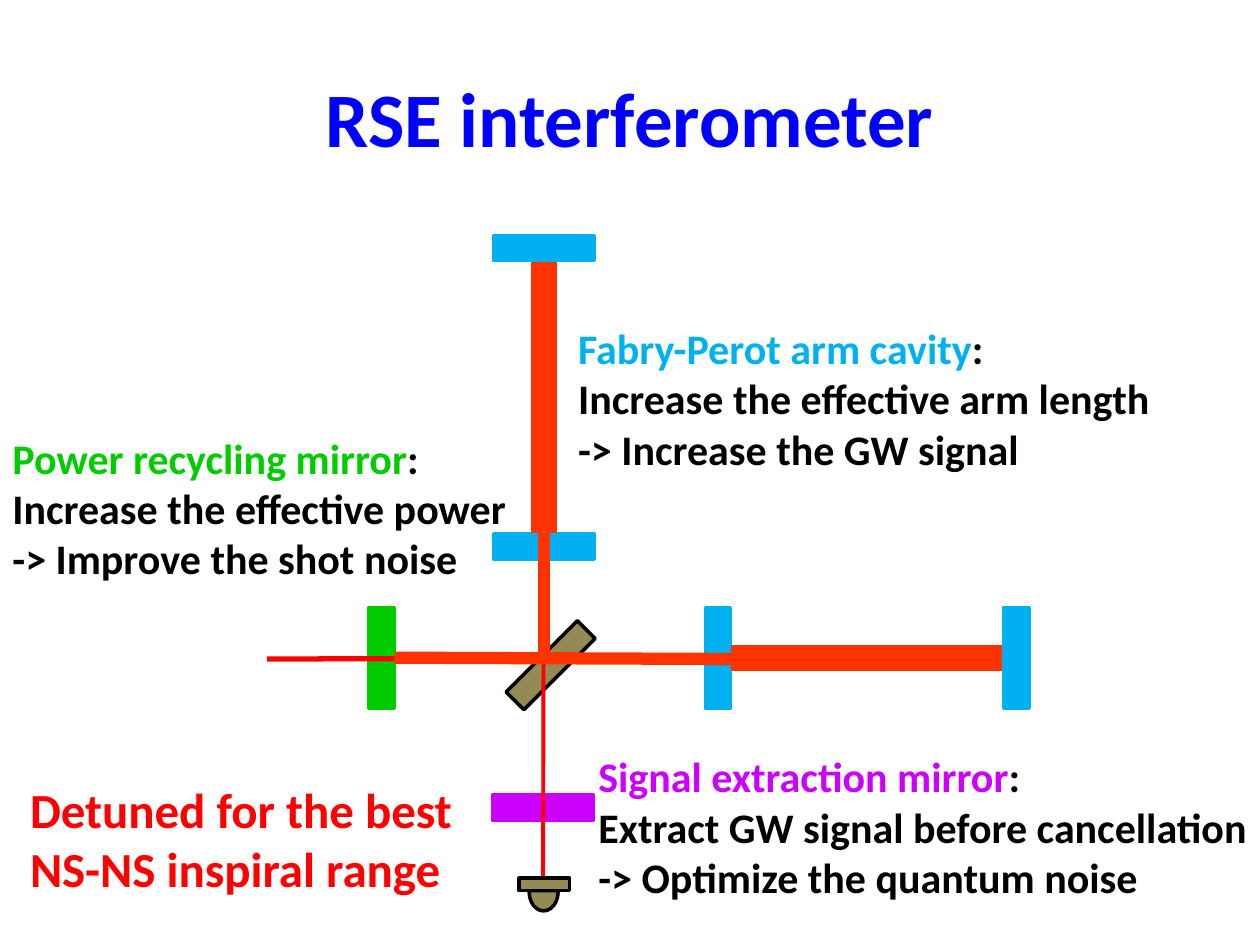
from lxml import etree
from pptx import Presentation
from pptx.dml.color import RGBColor
from pptx.enum.shapes import MSO_CONNECTOR, MSO_SHAPE
from pptx.enum.text import MSO_ANCHOR, MSO_AUTO_SIZE, PP_ALIGN
from pptx.oxml.ns import qn
from pptx.util import Inches, Pt

RECTANGLE, CHORD = MSO_SHAPE.RECTANGLE, MSO_SHAPE.CHORD
STRAIGHT = MSO_CONNECTOR.STRAIGHT
LEFT, CENTER = PP_ALIGN.LEFT, PP_ALIGN.CENTER
TOP, MIDDLE = MSO_ANCHOR.TOP, MSO_ANCHOR.MIDDLE
NO_RESIZE = MSO_AUTO_SIZE.NONE

BLACK, BLUE, RED, BEAM = "000000", "0000FF", "FF0000", "FF3300"
ARM, RECYCLING, EXTRACTION, OPTICS = "00B0F0", "00CC00", "CC00FF", "948A54"
MIRROR_LONG, MIRROR_THICK = 0.8, 0.2
AXIS_X, AXIS_Y = 4.32, 5.22


def color(hex_value):
    """Turn a hex string into a colour."""
    return RGBColor.from_string(hex_value)


def add_part(shapes, kind, box, fill, line):
    """Add a filled and outlined preset shape."""
    part = shapes.add_shape(kind, *map(Inches, box))
    part.shadow.inherit = False
    part.fill.solid()
    part.fill.fore_color.rgb = color(fill)
    part.line.color.rgb = color(line)
    part.line.width = Pt(2)
    return part


def add_mirror(page, center, fill, upright, line=None):
    """Add a mirror centred on a point, upright or lying flat."""
    width, height = MIRROR_LONG, MIRROR_THICK
    if upright:
        width, height = height, width
    x, y = center
    box = (x - width / 2, y - height / 2, width, height)
    return add_part(page.shapes, RECTANGLE, box, fill, line or fill)


def add_beam(page, start, end, hex_value, width):
    """Add a straight laser beam between two points."""
    beam = page.shapes.add_connector(STRAIGHT, *map(Inches, start + end))
    beam.line.color.rgb = color(hex_value)
    beam.line.width = Pt(width)
    etree.SubElement(beam._element.spPr, qn("a:effectLst"))


def add_detector(page):
    """Add the photodetector as a group of a half disc and a plate."""
    shapes = page.shapes.add_group_shape().shapes
    bowl = add_part(shapes, CHORD, (4.2, 6.93, 0.23, 0.3), OPTICS, BLACK)
    bowl.adjustments[0] = 212.69
    bowl.adjustments[1] = 111.55
    add_part(shapes, RECTANGLE, (4.12, 6.97, 0.4, 0.1), OPTICS, BLACK)


def add_text(page, box, lines, size, align=LEFT, anchor=TOP):
    """Add bold text from lines, each a list of (wording, colour) spans."""
    frame = page.shapes.add_textbox(*map(Inches, box)).text_frame
    layout = {"word_wrap": True, "auto_size": NO_RESIZE, "vertical_anchor": anchor}
    for name, value in layout.items():
        setattr(frame, name, value)
    for index, spans in enumerate(lines):
        para = frame.add_paragraph() if index else frame.paragraphs[0]
        para.alignment = align
        for wording, hex_value in spans:
            span = para.add_run()
            span.text = wording
            style = {"name": "Calibri", "size": Pt(size), "bold": True}
            for name, value in style.items():
                setattr(span.font, name, value)
            span.font.color.rgb = color(hex_value)


def add_note(page, box, heading, hex_value, details):
    """Add a coloured heading with black detail lines below it."""
    lines = [[(heading, hex_value), (":", BLACK)]]
    lines += [[(detail, BLACK)] for detail in details]
    add_text(page, box, lines, 24)


def add_interferometer(page):
    """Draw mirrors, beam splitter, beams and detector."""
    add_mirror(page, (4.31, 6.41), EXTRACTION, False)
    add_mirror(page, (3.03, AXIS_Y), RECYCLING, True)
    add_mirror(page, (AXIS_X, 4.34), ARM, False)
    add_mirror(page, (5.7, AXIS_Y), ARM, True)
    splitter = add_mirror(page, (4.37, 5.28), OPTICS, True, BLACK)
    splitter.rotation = 45
    add_beam(page, (2.12, 5.23), (7.97, AXIS_Y), RED, 3)
    add_beam(page, (4.31, 7.07), (AXIS_X, 2.08), RED, 2.25)
    add_detector(page)
    add_beam(page, (5.8, AXIS_Y), (7.97, AXIS_Y), BEAM, 15)
    add_beam(page, (AXIS_X, 2.08), (AXIS_X, 4.23), BEAM, 15)
    add_beam(page, (3.13, AXIS_Y), (5.81, 5.23), BEAM, 7)
    add_beam(page, (AXIS_X, 4.23), (AXIS_X, AXIS_Y), BEAM, 7)
    add_mirror(page, (AXIS_X, 1.97), ARM, False)
    add_mirror(page, (8.07, AXIS_Y), ARM, True)


def main():
    """Build and save the slide."""
    deck = Presentation()
    deck.slide_width, deck.slide_height = Inches(10), Inches(7.5)
    page = deck.slides.add_slide(deck.slide_layouts[6])
    title = [[("RSE interferometer", BLUE)]]
    add_text(page, (0.5, 0.3, 9, 1.25), title, 44, CENTER, MIDDLE)
    add_interferometer(page)
    add_note(page, (4.49, 2.51, 5.17, 1.31), "Fabry-Perot arm cavity", ARM,
             ["Increase the effective arm length", "-> Increase the GW signal"])
    add_note(page, (0, 3.38, 4.51, 1.31), "Power recycling mirror", RECYCLING,
             ["Increase the effective power", "-> Improve the shot noise"])
    add_note(page, (4.65, 5.91, 5.52, 1.31), "Signal extraction mirror", EXTRACTION,
             ["Extract GW signal before cancellation", "-> Optimize the quantum noise"])
    tuning = [[("Detuned for the best NS-NS inspiral range", RED)]]
    add_text(page, (0.14, 6.14, 3.86, 1.04), tuning, 28)
    deck.save("out.pptx")


if __name__ == "__main__":
    main()
